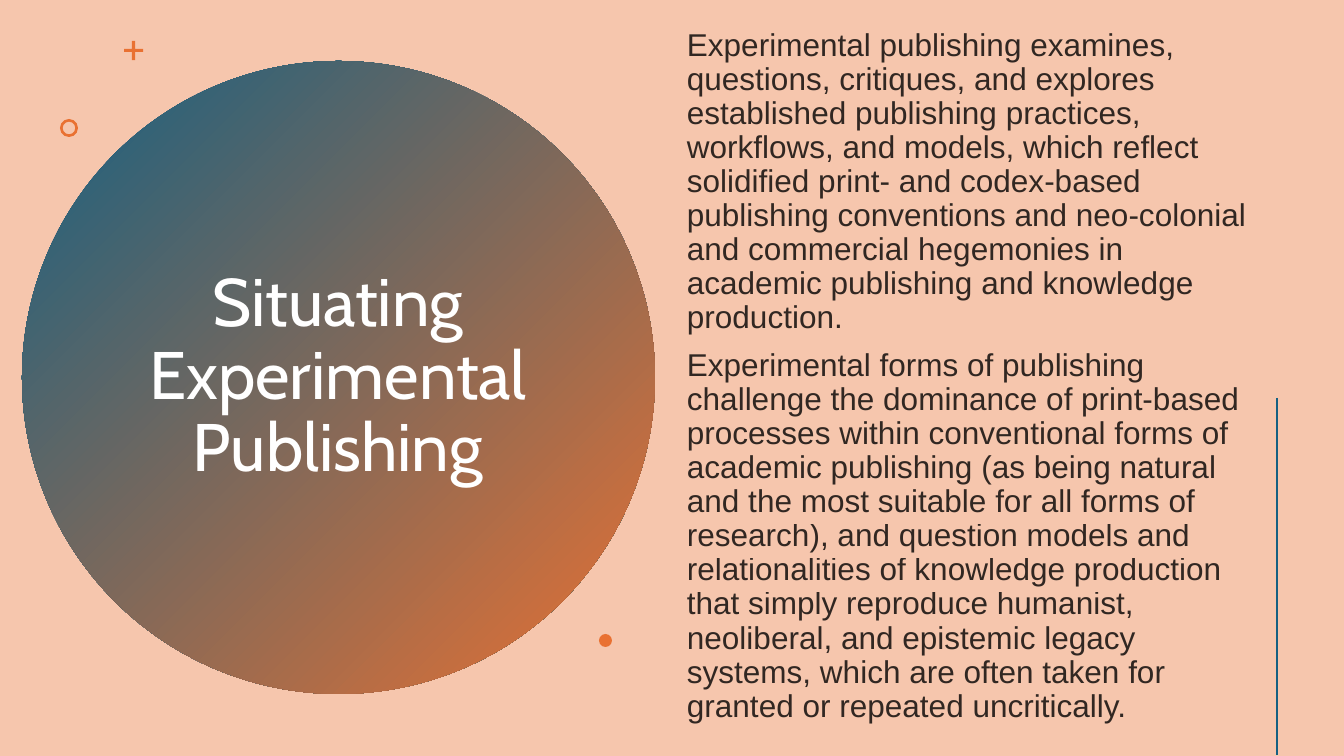
from lxml import etree
from pptx import Presentation
from pptx.dml.color import RGBColor
from pptx.enum.shapes import MSO_CONNECTOR as Connector, MSO_SHAPE as Shape
from pptx.enum.text import MSO_ANCHOR as Anchor, PP_ALIGN as Align
from pptx.oxml.ns import qn
from pptx.util import Pt

PX = 914400 / 100.8
COLORS = {
    "peach": "F6C6AD",
    "blue": "156082",
    "orange": "E97132",
    "white": "FFFFFF",
    "black": "000000",
}
TITLE = "Situating Experimental Publishing"
BODY = [
    "Experimental publishing examines, questions, critiques, and explores "
    "established publishing practices, workflows, and models, which reflect "
    "solidified print- and codex-based publishing conventions and neo-colonial "
    "and commercial hegemonies in academic publishing and knowledge production.",
    "Experimental forms of publishing challenge the dominance of print-based "
    "processes within conventional forms of academic publishing (as being natural "
    "and the most suitable for all forms of research), and question models and "
    "relationalities of knowledge production that simply reproduce humanist, "
    "neoliberal, and epistemic legacy systems, which are often taken for granted "
    "or repeated uncritically.",
]


def px(length):
    return round(length * PX)


def color(name):
    return RGBColor.from_string(COLORS[name])


def add_solid(page, kind, left, top, size, adjustment=None):
    """Add a square-boxed orange shape without outline."""
    shape = page.shapes.add_shape(kind, px(left), px(top), px(size), px(size))
    shape.shadow.inherit = False
    shape.fill.solid()
    shape.fill.fore_color.rgb = color("orange")
    shape.line.fill.background()
    if adjustment is not None:
        shape.adjustments[0] = adjustment
    return shape


def add_text(page, box, texts, font_name, size, color_name, align, space=0):
    """Add a middle-anchored text box and return its paragraphs."""
    frame = page.shapes.add_textbox(*map(px, box)).text_frame
    frame.word_wrap = True
    frame.vertical_anchor = Anchor.MIDDLE
    frame.text = "\n".join(texts)
    for para in frame.paragraphs:
        para.alignment = align
        para.line_spacing = 0.9
        para.space_before = Pt(space)
        para.font.name = font_name
        para.font.size = Pt(size)
        para.font.color.rgb = color(color_name)
    return frame.paragraphs


def title_circle(page, left, top, size):
    circle = add_solid(page, Shape.OVAL, left, top, size)
    circle.fill.gradient()
    circle.fill.gradient_angle = 315
    for stop, name, position in zip(circle.fill.gradient_stops, ("blue", "orange"), (0, 1)):
        stop.color.rgb = color(name)
        stop.position = position
    add_text(page, (left + 115, top + 81, 402, 471), [TITLE],
             "Cabin", 48, "white", Align.CENTER)
    add_solid(page, Shape.CROSS, left + 102, top - 20, 19, 0.42)
    add_solid(page, Shape.DONUT, left + 38, top + 58, 18, 0.15)
    add_solid(page, Shape.OVAL, left + 577, top + 573, 13)


def body_panel(page, left, top, width, height):
    paras = add_text(page, (left, top, width, height), BODY,
                     "Arial", 22.5, "black", Align.LEFT, space=10)
    for para in paras:
        for tint in para._p.iter(qn("a:srgbClr")):
            etree.SubElement(tint, qn("a:alpha"), val="80000")


def side_rule(page, left, top, bottom):
    rule = page.shapes.add_connector(Connector.STRAIGHT, px(left), px(top), px(left), px(bottom))
    rule.line.color.rgb = color("blue")
    rule.line.width = Pt(2)
    etree.SubElement(rule._element.spPr, qn("a:effectLst"))


def main():
    deck = Presentation()
    deck.slide_width, deck.slide_height = px(1344), px(756)
    page = deck.slides.add_slide(deck.slide_layouts[6])
    page.background.fill.solid()
    page.background.fill.fore_color.rgb = color("peach")
    title_circle(page, 22, 61, 633)
    body_panel(page, 677, -28, 600, 809)
    side_rule(page, 1277, 398, 755)
    deck.save("out.pptx")


if __name__ == "__main__":
    main()
